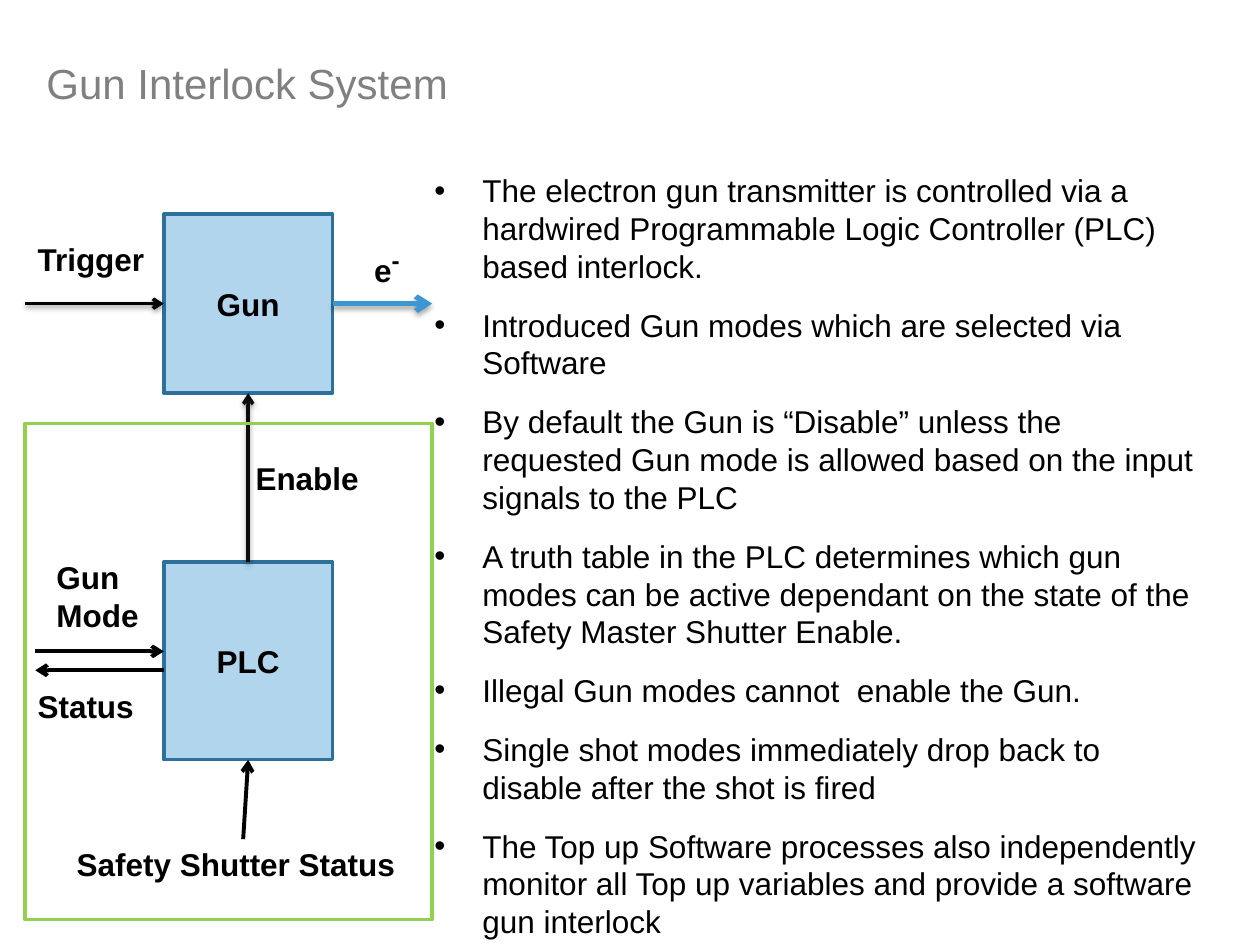
from lxml import etree
from pptx import Presentation
from pptx.dml.color import RGBColor
from pptx.enum.shapes import MSO_CONNECTOR, MSO_SHAPE
from pptx.enum.text import MSO_ANCHOR, PP_ALIGN
from pptx.oxml.ns import qn
from pptx.util import Inches, Pt

STRAIGHT = MSO_CONNECTOR.STRAIGHT
RECTANGLE = MSO_SHAPE.RECTANGLE
MIDDLE = MSO_ANCHOR.MIDDLE
CENTER = PP_ALIGN.CENTER

BLACK = "000000"
POINTS = [
    "The electron gun transmitter is controlled via a hardwired Programmable Logic Controller (PLC) based interlock.",
    "Introduced Gun modes which are selected via Software",
    "By default the Gun is “Disable” unless the requested Gun mode is allowed based on the input signals to the PLC",
    "A truth table in the PLC determines which gun modes can be active dependant on the state of the Safety Master Shutter Enable.",
    "Illegal Gun modes cannot  enable the Gun.",
    "Single shot modes immediately drop back to disable after the shot is fired",
    "The Top up Software processes also independently monitor all Top up variables and provide a software gun interlock",
]


def color(value):
    return RGBColor.from_string(value)


def style_font(font, size, value, bold=False):
    font.name = "Arial"
    font.size = Pt(size)
    font.bold = bold
    font.color.rgb = color(value)


def style_text(frame, size, value, bold=False):
    for para in frame.paragraphs:
        for span in para.runs:
            style_font(span.font, size, value, bold)


def add_text(page, box, text, size=18, value=BLACK, bold=True, wrap=True):
    frame = page.shapes.add_textbox(*map(Inches, box)).text_frame
    frame.word_wrap = wrap
    frame.text = text
    style_text(frame, size, value, bold)
    return frame


def add_title(page, box):
    frame = add_text(page, box, "Gun Interlock System", 24, "808080", False)
    frame.vertical_anchor = MIDDLE


def add_points(page, box):
    frame = add_text(page, box, "\n".join(POINTS), bold=False)
    for index, para in enumerate(frame.paragraphs):
        para.space_before = Pt(6 if index else 0)
        para.space_after = Pt(6)
        properties = para._p.get_or_add_pPr()
        properties.set("marL", str(Inches(0.38)))
        properties.set("indent", str(Inches(-0.38)))
        etree.SubElement(properties, qn("a:buFont"), typeface="Arial")
        etree.SubElement(properties, qn("a:buChar"), char="•")


def add_block(page, box, line, fill=None, text=None):
    block = page.shapes.add_shape(RECTANGLE, *map(Inches, box))
    block.shadow.inherit = False
    block.line.color.rgb = color(line)
    block.line.width = Pt(2)
    if fill:
        block.fill.solid()
        block.fill.fore_color.rgb = color(fill)
    else:
        block.fill.background()
    if text:
        frame = block.text_frame
        frame.text = text
        frame.vertical_anchor = MIDDLE
        frame.paragraphs[0].alignment = CENTER
        style_text(frame, 18, BLACK, True)


def add_arrow(page, start, end, value=BLACK, width=2.25, shadow=None):
    arrow = page.shapes.add_connector(STRAIGHT, *map(Inches, start + end))
    arrow.line.color.rgb = color(value)
    arrow.line.width = Pt(width)
    etree.SubElement(arrow.line._get_or_add_ln(), qn("a:tailEnd"), type="arrow")
    effects = etree.SubElement(arrow._element.spPr, qn("a:effectLst"))
    if shadow:
        opacity, distance = shadow
        outer = etree.SubElement(
            effects, qn("a:outerShdw"), blurRad=str(Pt(3.1)),
            dist=str(Pt(distance)), dir="5400000", rotWithShape="0")
        tint = etree.SubElement(outer, qn("a:srgbClr"), val=BLACK)
        etree.SubElement(tint, qn("a:alpha"), val=str(opacity * 1000))


def add_diagram(page, box):
    left, top, width, height = box
    right = left + width
    block_left, block_width = left + 1.1, 1.34
    block_right = block_left + block_width
    middle = block_left + block_width / 2
    gun_height, plc_top, plc_height = 1.42, top + 2.76, 1.57
    gun_line = top + gun_height / 2
    mode_line, status_line = plc_top + 0.71, plc_top + 0.86
    port = left + 0.08
    soft = (38, 1.6)

    for text, block_top, block_height in (
            ("Gun", top, gun_height), ("PLC", plc_top, plc_height)):
        add_block(page, (block_left, block_top, block_width, block_height),
                  "2C709B", "B1D5ED", text)

    add_arrow(page, (middle, plc_top), (middle, top + gun_height), "0D0D0D", 2, soft)
    add_arrow(page, (left, gun_line), (block_left, gun_line), BLACK, 2, soft)
    add_arrow(page, (block_right, gun_line), (right, gun_line), "3C97D1", 3, (35, 1.8))
    add_arrow(page, (port, mode_line), (block_left, mode_line))
    add_arrow(page, (block_left, status_line), (port, status_line))
    add_arrow(page, (middle - 0.04, top + 4.96), (middle, plc_top + plc_height))

    for text, x, y, label_width, label_height, wrap in (
            ("Enable", 1.73, 1.89, 1.26, 0.4, True),
            ("Trigger", 0, 0.16, 1.06, 0.4, False),
            ("Gun Mode", 0.15, 2.68, 0.87, 0.71, True),
            ("Status", 0, 3.7, 1.1, 0.4, True),
            ("Safety Shutter Status", 0.31, 4.96, 2.75, 0.4, False)):
        add_text(page, (left + x, top + y, label_width, label_height), text, wrap=wrap)

    electron = add_text(page, (left + 2.67, top + 0.16, 0.42, 0.4), "e", wrap=False)
    charge = electron.paragraphs[0].add_run()
    charge.text = "-"
    style_font(charge.font, 24, BLACK, True)
    charge._r.get_or_add_rPr().set("baseline", "30000")

    frame_top = top + 1.66
    add_block(page, (left, frame_top, width, top + height - frame_top), "92D050")


def main():
    deck = Presentation()
    deck.slide_width, deck.slide_height = Inches(10), Inches(7.5)
    page = deck.slides.add_slide(deck.slide_layouts[6])
    add_title(page, (0.27, 0.21, 9, 0.89))
    add_points(page, (3.35, 1.31, 6.3, 5.59))
    add_diagram(page, (0.2, 1.7, 3.23, 5.6))
    deck.save("out.pptx")


if __name__ == "__main__":
    main()
